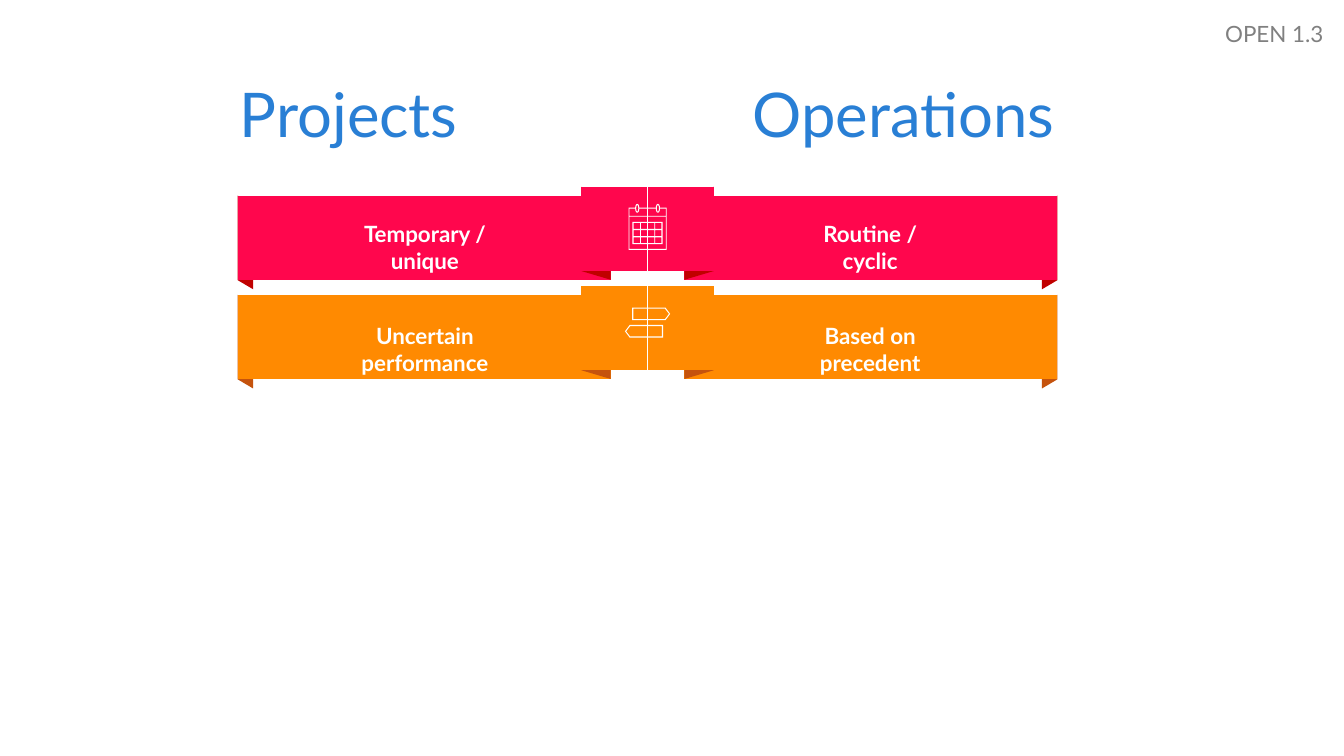
"""Build a slide that contrasts projects with operations on folded ribbons."""
import pptx
import pptx.dml.color
import pptx.enum.shapes
import pptx.enum.text
import pptx.util

Cm = pptx.util.Cm
RGBColor = pptx.dml.color.RGBColor
ALIGN = pptx.enum.text.PP_ALIGN
ANCHOR = pptx.enum.text.MSO_ANCHOR
FIT = pptx.enum.text.MSO_AUTO_SIZE

BLUE = RGBColor(0x29, 0x7F, 0xD5)
CRIMSON = RGBColor(0xFF, 0x06, 0x4D)
DARK_RED = RGBColor(0xC0, 0x00, 0x00)
ORANGE = RGBColor(0xFF, 0x8A, 0x01)
RUST = RGBColor(0xC5, 0x53, 0x0D)
WHITE = RGBColor(0xFF, 0xFF, 0xFF)
GRAY = RGBColor(0x80, 0x80, 0x80)

CENTER = 16.32
FIRST_TOP = 4.93
PITCH = 2.5
LABEL_OFFSET = 5.61


def rectangle(left, top, right, bottom):
    return [(left, top), (right, top), (right, bottom), (left, bottom)]


class RibbonSlide:
    font = "Lato"

    def __init__(self, deck):
        self.slide = deck.slides.add_slide(deck.slide_layouts[5])
        self.shapes = self.slide.shapes

    def letter(self, box, text, size, color, align, bold=False):
        paragraph = box.text_frame.paragraphs[0]
        paragraph.text = text
        paragraph.alignment = align
        paragraph.font.name = self.font
        paragraph.font.size = pptx.util.Pt(size)
        paragraph.font.color.rgb = color
        paragraph.font.bold = bold
        return paragraph

    def heading(self, box, text, left, width, align):
        box.left, box.top, box.width, box.height = Cm(left), Cm(1.12), Cm(width), Cm(3.68)
        box.text_frame.word_wrap = True
        box.text_frame.auto_size = FIT.NONE
        box.text_frame.vertical_anchor = ANCHOR.MIDDLE
        self.letter(box, text, 44, BLUE, align).line_spacing = 0.9

    def text_box(self, left, top, width, height):
        return self.shapes.add_textbox(Cm(left), Cm(top), Cm(width), Cm(height))

    def page_tag(self, text):
        tag = self.text_box(30.02, 0.38, 3.58, 0.94)
        tag.text_frame.word_wrap = True
        self.letter(tag, text, 16, GRAY, ALIGN.RIGHT)

    def label(self, text, middle, top, width):
        box = self.text_box(middle - width / 2, top, width, 1.19)
        frame = box.text_frame
        frame.word_wrap = False
        frame.auto_size = FIT.SHAPE_TO_FIT_TEXT
        frame.margin_left = frame.margin_right = Cm(0.51)
        frame.margin_top = frame.margin_bottom = Cm(0.25)
        self.letter(box, text, 16, WHITE, ALIGN.CENTER, bold=True)

    def paint(self, shape, fill):
        shape.shadow.inherit = False
        shape.fill.solid()
        shape.fill.fore_color.rgb = fill

    def outline(self, contours, top, fill, side=1):
        placed = [[(Cm(CENTER + side * x), Cm(top + y)) for x, y in contour]
                  for contour in contours]
        builder = self.shapes.build_freeform(*placed[0][0])
        builder.add_line_segments(placed[0][1:])
        for contour in placed[1:]:
            builder.move_to(*contour[0])
            builder.add_line_segments(contour[1:])
        shape = builder.convert_to_shape()
        self.paint(shape, fill)
        shape.line.fill.background()

    def ribbon(self, side, top, color, shade):
        tail = [(9.94, 2.36), (10.33, 2.13), (10.33, 0), (9.94, 0.23)]
        band = rectangle(0.93, 0, 10.33, 2.12)
        fold = [(0.93, 2.12), (1.67, 1.9), (1.67, -0.22), (0.93, 0)]
        cap = rectangle(0.01, -0.22, 1.67, 1.9)
        for part, fill in ((tail, shade), (band, color), (fold, shade), (cap, color)):
            self.outline([part], top, fill, side)

    def calendar(self, top):
        frame = [rectangle(-0.48, 0.3, 0.48, 1.37),
                 rectangle(-0.46, 0.33, 0.46, 0.51),
                 rectangle(-0.46, 0.53, 0.46, 1.34),
                 rectangle(-0.38, 0.66, 0.38, 1.22)]
        for row in range(3):
            for column in range(4):
                left, upper = -0.35 + 0.18 * column, 0.69 + 0.18 * row
                frame.append(rectangle(left, upper, left + 0.16, upper + 0.15))
        self.outline(frame, top, WHITE)
        for offset in (-0.26, 0.26):
            ring = self.shapes.add_shape(
                pptx.enum.shapes.MSO_SHAPE.OVAL, Cm(CENTER + offset - 0.04),
                Cm(top + 0.22), Cm(0.08), Cm(0.2))
            self.paint(ring, CRIMSON)
            ring.line.color.rgb = WHITE
            ring.line.width = pptx.util.Pt(0.75)

    def signpost(self, top):
        border = [(-0.39, -0.38), (0.45, -0.38), (0.57, -0.22), (0.45, -0.06), (-0.39, -0.06)]
        inside = [(-0.36, -0.35), (0.44, -0.35), (0.54, -0.22), (0.44, -0.09), (-0.36, -0.09)]
        board = [border, inside]
        turned = [[(-x, -y) for x, y in contour] for contour in board]
        posts = [rectangle(-0.01, upper, 0.01, lower)
                 for upper, lower in ((-0.5, -0.38), (-0.06, 0.06), (0.38, 0.66))]
        self.outline(board + turned + posts, top + 0.7, WHITE)


def main():
    deck = pptx.Presentation()
    deck.slide_width, deck.slide_height = Cm(33.87), Cm(19.05)
    page = RibbonSlide(deck)
    page.heading(page.shapes.title, "Projects", 5.79, 6.76, ALIGN.LEFT)

    rows = [
        (CRIMSON, DARK_RED, 0.38, page.calendar,
         ("Routine /\vcyclic", 4.83), ("Temporary /\vunique", 5.84)),
        (ORANGE, RUST, 0.45, page.signpost,
         ("Based on\vprecedent", 5.89), ("Uncertain\vperformance", 6.68)),
    ]
    for index, (color, shade, drop, icon, operation, project) in enumerate(rows):
        top = FIRST_TOP + PITCH * index
        for side, (text, width) in ((1, operation), (-1, project)):
            page.ribbon(side, top, color, shade)
            page.label(text, CENTER + side * LABEL_OFFSET, top + drop, width)
        icon(top)

    operations = page.text_box(13.72, 1.12, 13.11, 3.68)
    page.heading(operations, "Operations", 13.72, 13.11, ALIGN.RIGHT)
    page.page_tag("OPEN 1.3")
    deck.save("out.pptx")


if __name__ == "__main__":
    main()
